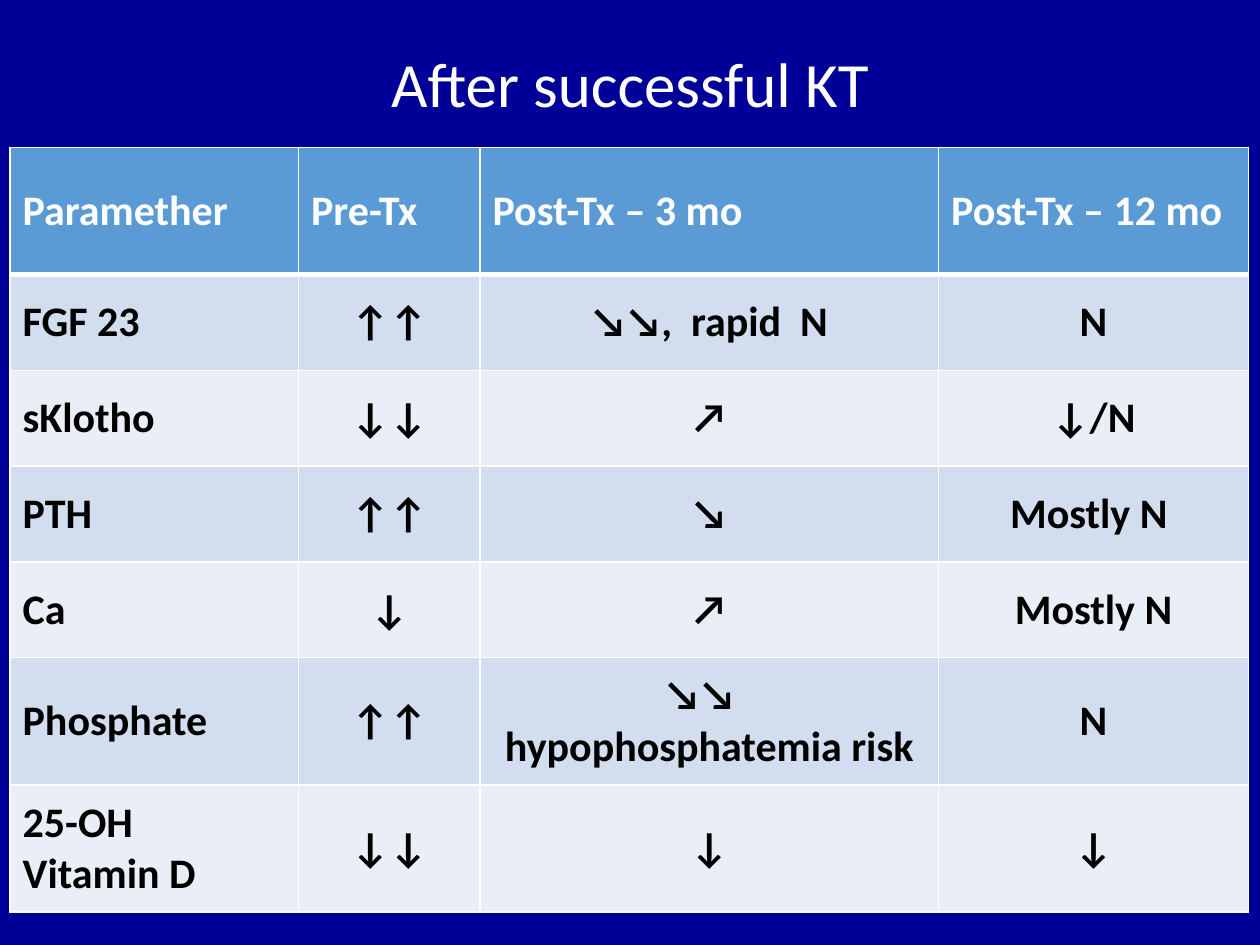
from typing import NamedTuple

from lxml.etree import SubElement
from pptx import Presentation
from pptx.dml.color import RGBColor
from pptx.enum.text import MSO_ANCHOR as Anchor, PP_ALIGN as Align
from pptx.oxml.ns import qn
from pptx.util import Inches, Pt

NAVY, WHITE, BLACK = "000099", "FFFFFF", "000000"
HEADER_BLUE = "5B9BD5"
BAND_FILLS = ("D2DEEF", "EAEFF7")
COLUMN_WIDTHS = (2.29, 1.44, 3.64, 2.46)
HEADER_HEIGHT, ONE_LINE, TWO_LINES = 1.01, 0.76, 1.01
HEADINGS = ("Paramether", "Pre-Tx", "Post-Tx – 3 mo", "Post-Tx – 12 mo")


class Marker(NamedTuple):
    name: str
    before: str
    month_3: str
    month_12: str


MARKERS = (
    Marker("FGF 23", "↑↑", "↘↘,  rapid  N", "N"),
    Marker("sKlotho", "↓↓", "↗", "↓/N"),
    Marker("PTH", "↑↑", "↘", "Mostly N "),
    Marker("Ca", "↓", "↗", "Mostly N"),
    Marker("Phosphate", "↑↑", "↘↘  \nhypophosphatemia risk", "N"),
    Marker("25-OH\nVitamin D", "↓↓", "↓", "↓"),
)


def paint(fill, color: str) -> None:
    fill.solid()
    fill.fore_color.rgb = RGBColor.from_string(color)


def write(frame, text: str, size: float, color: str, align, bold: bool = False) -> None:
    """Write each line of the text as its own paragraph."""
    for index, line in enumerate(text.split("\n")):
        paragraph = frame.add_paragraph() if index else frame.paragraphs[0]
        paragraph.alignment = align
        run = paragraph.add_run()
        run.text = line
        run.font.name = "Calibri"
        run.font.size = Pt(size)
        run.font.bold = bold
        paint(run.font.fill, color)


def add_borders(cell, top: float, bottom: float) -> None:
    """Draw white cell borders; the left and right ones are 1 pt wide."""
    properties = cell._tc.get_or_add_tcPr()
    for side, width in (("L", 1), ("R", 1), ("T", top), ("B", bottom)):
        line = SubElement(properties, qn(f"a:ln{side}"), w=str(Pt(width)))
        color = SubElement(line, qn("a:solidFill"))
        SubElement(color, qn("a:srgbClr"), val=WHITE)


def add_title(slide, text: str) -> None:
    box = slide.shapes.add_textbox(Inches(0.5), Inches(0.3), Inches(9), Inches(0.78))
    frame = box.text_frame
    frame.word_wrap = True
    frame.vertical_anchor = Anchor.MIDDLE
    write(frame, text, 36, WHITE, Align.CENTER)
    frame.paragraphs[0].line_spacing = 0.9


def add_marker_table(slide) -> None:
    rows = (HEADINGS, *MARKERS)
    heights = [HEADER_HEIGHT] + [
        TWO_LINES if any("\n" in text for text in marker) else ONE_LINE
        for marker in MARKERS
    ]
    table = slide.shapes.add_table(
        len(rows), len(HEADINGS), Inches(0.08), Inches(1.17),
        Inches(sum(COLUMN_WIDTHS)), Inches(sum(heights)),
    ).table
    for column, width in zip(table.columns, COLUMN_WIDTHS):
        column.width = Inches(width)
    for row, height in zip(table.rows, heights):
        row.height = Inches(height)

    for r, texts in enumerate(rows):
        is_header = r == 0
        for c, text in enumerate(texts):
            cell = table.cell(r, c)
            cell.vertical_anchor = Anchor.MIDDLE
            add_borders(cell, top=3 if r == 1 else 1, bottom=3 if is_header else 1)
            paint(cell.fill, HEADER_BLUE if is_header else BAND_FILLS[(r - 1) % 2])
            align = Align.LEFT if is_header or c == 0 else Align.CENTER
            write(cell.text_frame, text, 24, WHITE if is_header else BLACK, align, bold=True)


def main() -> None:
    deck = Presentation()
    deck.slide_width, deck.slide_height = Inches(10), Inches(7.5)
    slide = deck.slides.add_slide(deck.slide_layouts[6])
    paint(slide.background.fill, NAVY)
    add_title(slide, "After successful KT")
    add_marker_table(slide)
    deck.save("out.pptx")


if __name__ == "__main__":
    main()
